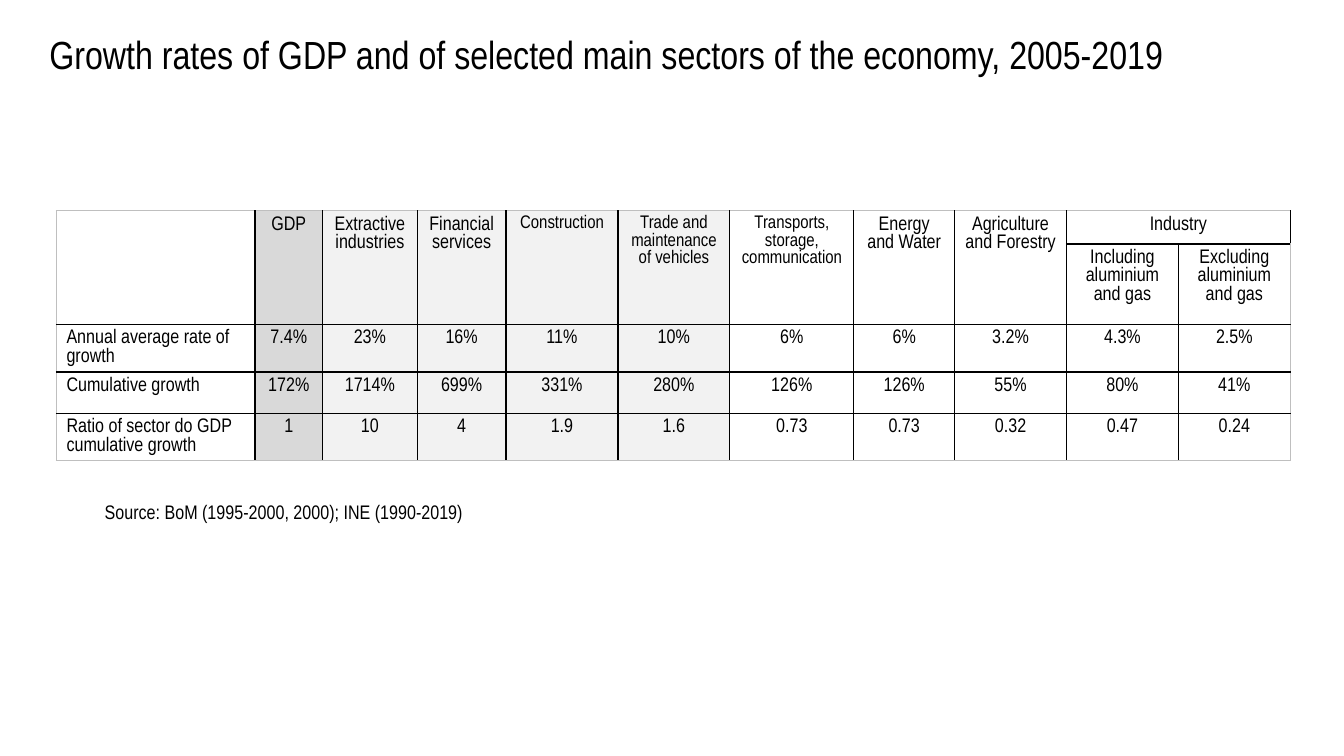
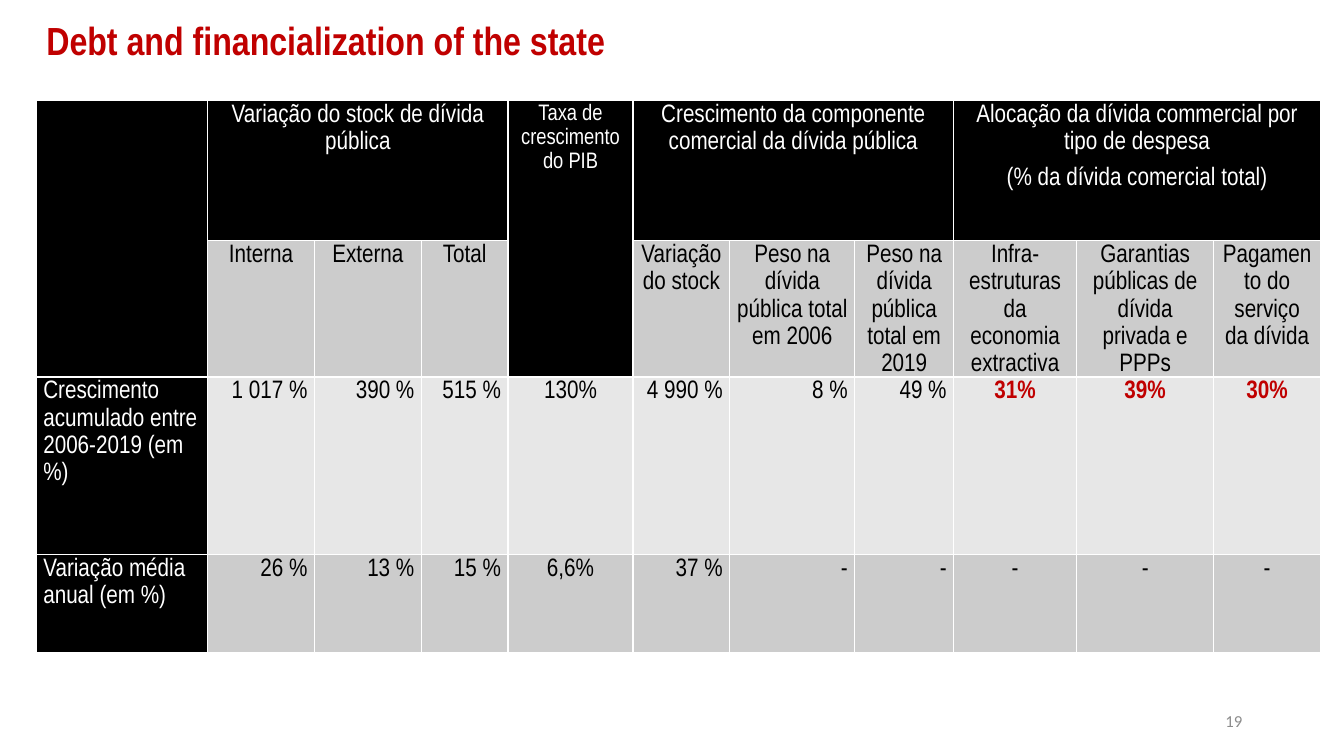
"""Build two slides with tables on growth by sector and on public debt."""
from lxml import etree
from pptx import Presentation
from pptx.dml.color import RGBColor
from pptx.enum.text import MSO_ANCHOR, MSO_AUTO_SIZE, PP_ALIGN
from pptx.oxml.ns import qn
from pptx.util import Inches, Pt

LEFT, CENTER, RIGHT = PP_ALIGN.LEFT, PP_ALIGN.CENTER, PP_ALIGN.RIGHT
MIDDLE, FIXED = MSO_ANCHOR.MIDDLE, MSO_AUTO_SIZE.NONE
BLACK = RGBColor(0x00, 0x00, 0x00)
WHITE = RGBColor(0xFF, 0xFF, 0xFF)
RED = RGBColor(0xC0, 0x00, 0x00)
EDGE_GREY = RGBColor(0xBF, 0xBF, 0xBF)
GDP_GREY = RGBColor(0xD9, 0xD9, 0xD9)
SECTOR_GREY = RGBColor(0xF2, 0xF2, 0xF2)
DARK_BAND = RGBColor(0xCC, 0xCC, 0xCC)
LIGHT_BAND = RGBColor(0xE7, 0xE7, 0xE7)
NUMBER_GREY = RGBColor(0x8C, 0x8C, 0x8C)
NARROW = "Arial Narrow"
TITLE_ONLY = 5

prs = Presentation()
prs.slide_width, prs.slide_height = Inches(13.33), Inches(7.5)
ACROSS, DOWN = prs.slide_width / 100, prs.slide_height / 100


def add_grid(slide, box, columns, rows, texts, spans):
    """Add a plain table; box is in percent of the slide, columns and rows are weights."""
    left, top, width, height = box
    grid = slide.shapes.add_table(
        len(rows), len(columns), int(left * ACROSS), int(top * DOWN),
        int(width * ACROSS), int(height * DOWN)).table
    grid.first_row = grid.horz_banding = False
    for column, weight in zip(grid.columns, columns):
        column.width = int(width * ACROSS * weight / sum(columns))
    for row, weight in zip(grid.rows, rows):
        row.height = int(height * DOWN * weight / sum(rows))
    for r, line in enumerate(texts):
        for c, text in enumerate(line):
            grid.cell(r, c).text = text
    for first_row, first_col, last_row, last_col in spans:
        grid.cell(first_row, first_col).merge(grid.cell(last_row, last_col))
    return grid


def format_cell(cell, fill, edges, font, paragraph):
    """Set fill, the left, right, top and bottom edge colours, and text formats."""
    if fill is None:
        cell.fill.background()
    else:
        cell.fill.solid()
        cell.fill.fore_color.rgb = fill
    properties = cell._tc.get_or_add_tcPr()
    for place, (side, color) in enumerate(zip("LRTB", edges)):
        edge = etree.Element(qn(f"a:ln{side}"), w=str(Pt(1)))
        solid = etree.SubElement(edge, qn("a:solidFill"))
        etree.SubElement(solid, qn("a:srgbClr"), val=str(color))
        properties.insert(place, edge)
    for line in cell.text_frame.paragraphs:
        for key, value in paragraph.items():
            setattr(line, key, value)
        for key, value in font.items():
            if key == "color":
                line.font.color.rgb = value
            else:
                setattr(line.font, key, value)
        for run in line.runs:
            run.font.name, run.font.size = line.font.name, line.font.size
            run.font.bold = line.font.bold
            run.font.color.rgb = font["color"]


HEADINGS = [
    ("Growth rates of GDP and of selected main sectors of the economy, 2005-2019",
     (2.93, 2.4, 95.05, 10.27), BLACK, False),
    ("Debt and financialization of the state", (2.7, 2.13, 95.65, 7.07), RED, True),
]
slides = []
for heading, (left, top, width, height), color, bold in HEADINGS:
    slide = prs.slides.add_slide(prs.slide_layouts[TITLE_ONLY])
    title = slide.shapes.title
    title.left, title.top = int(left * ACROSS), int(top * DOWN)
    title.width, title.height = int(width * ACROSS), int(height * DOWN)
    frame = title.text_frame
    frame.text = heading
    frame.vertical_anchor, frame.auto_size = MIDDLE, FIXED
    line = frame.paragraphs[0]
    line.alignment, line.line_spacing = LEFT, 0.9
    font = line.runs[0].font
    font.name, font.size, font.bold = NARROW, Pt(28), bold
    font.color.rgb = color
    slides.append(slide)
growth_slide, debt_slide = slides

GROWTH_COLUMNS = [1.97, 0.67, 0.94, 0.88, 1.11, 1.11, 1.23, 1, 1.11, 1.11, 1.11]
GROWTH_ROWS = [0.33, 0.8, 0.47, 0.41, 0.47]
GROWTH_TEXTS = [
    ["", "GDP", "Extractive industries", "Financial services", "Construction",
     "Trade and maintenance of vehicles", "Transports, storage, communication",
     "Energy and Water", "Agriculture and Forestry", "Industry", ""],
    [""] * 9 + ["Including aluminium and gas", "Excluding aluminium and gas"],
    ["Annual average rate of growth", "7.4%", "23%", "16%", "11%", "10%", "6%", "6%",
     "3.2%", "4.3%", "2.5%"],
    ["Cumulative growth", "172%", "1714%", "699%", "331%", "280%", "126%", "126%",
     "55%", "80%", "41%"],
    ["Ratio of sector do GDP cumulative growth", "1", "10", "4", "1.9", "1.6", "0.73",
     "0.73", "0.32", "0.47", "0.24"],
]
GROWTH_SPANS = [(0, c, 1, c) for c in range(9)] + [(0, 9, 0, 10)]
GROWTH_FILLS = [None, GDP_GREY] + [SECTOR_GREY] * 4 + [None] * 5
SMALL_HEADERS = (4, 5, 6)

growth = add_grid(growth_slide, (4.2, 27.87, 91.82, 33.07), GROWTH_COLUMNS, GROWTH_ROWS,
                  GROWTH_TEXTS, GROWTH_SPANS)
last_row, last_col = len(GROWTH_ROWS) - 1, len(GROWTH_COLUMNS) - 1
for r in range(last_row + 1):
    for c in range(last_col + 1):
        outer = (c == 0, c == last_col, r == 0, r == last_row)
        edges = [EDGE_GREY if at_rim else BLACK for at_rim in outer]
        size = Pt(13) if r == 0 and c in SMALL_HEADERS else Pt(14)
        format_cell(growth.cell(r, c), GROWTH_FILLS[c], edges,
                    {"name": NARROW, "size": size, "color": BLACK},
                    {"alignment": CENTER if c else LEFT})

DEBT_COLUMNS = [1.7, 1.06, 1.06, 0.86, 1.24, 0.96, 1.24, 0.98, 1.22, 1.36, 1.06]
DEBT_ROWS = [1.39, 1.34, 1.76, 0.97]
DEBT_TEXTS = [
    ["", "Variação do stock de dívida pública", "", "", "Taxa de crescimento do PIB",
     "Crescimento da componente comercial da dívida pública", "", "",
     "Alocação da dívida commercial por tipo de despesa\n(% da dívida comercial total)",
     "", ""],
    ["", "Interna", "Externa", "Total", "", "Variação do stock",
     "Peso na dívida pública total em 2006", "Peso na dívida pública total em 2019",
     "Infra-estruturas da economia extractiva",
     "Garantias públicas de dívida privada e PPPs", "Pagamento do serviço da dívida"],
    ["Crescimento acumulado entre 2006-2019 (em %)", "1 017 %", "390 %", "515 %", "130%",
     "4 990 %", "8 %", "49 %", "31%", "39%", "30%"],
    ["Variação média anual (em %)", "26 %", "13 %", "15 %", "6,6%", "37 %", "-", "-",
     "-", "-", "-"],
]
DEBT_SPANS = [(0, 0, 1, 0), (0, 4, 1, 4)] + [(0, c, 0, c + 2) for c in (1, 5, 8)]
BAND_FILLS = [BLACK, DARK_BAND, LIGHT_BAND, DARK_BAND]
GDP_COLUMN, ALLOCATION_START = 4, 8
DEBT_MARGINS = {"margin_left": Inches(0.07), "margin_right": Inches(0.07),
                "margin_top": 0, "margin_bottom": 0}

debt = add_grid(debt_slide, (2.7, 13.33, 95.57, 72.8), DEBT_COLUMNS, DEBT_ROWS,
                DEBT_TEXTS, DEBT_SPANS)
for r, band in enumerate(BAND_FILLS):
    for c in range(len(DEBT_COLUMNS)):
        cell = debt.cell(r, c)
        for key, value in DEBT_MARGINS.items():
            setattr(cell, key, value)
        header = r == 0 or c == 0 or (r == 1 and c == GDP_COLUMN)
        share = r == 2 and c >= ALLOCATION_START
        amount = r >= 2 and 0 < c < ALLOCATION_START and c != GDP_COLUMN
        alignment = RIGHT if amount else CENTER if c else LEFT
        color = WHITE if header else RED if share else BLACK
        size = Pt(16) if r == 0 and c == GDP_COLUMN else Pt(18)
        format_cell(cell, BLACK if header else band, [WHITE] * 4,
                    {"name": NARROW, "size": size, "color": color, "bold": share},
                    {"alignment": alignment, "line_spacing": 1.15,
                     "space_before": Pt(0 if amount else 3),
                     "space_after": Pt(18 if amount else 3)})

CAPTIONS = [
    (growth_slide, "Source: BoM (1995-2000, 2000); INE (1990-2019)",
     (7.05, 65.47, 31.51, 4.53), NARROW, 14, BLACK, LEFT),
    (debt_slide, "19", (70.67, 92.67, 22.51, 5.33), "Calibri", 12, NUMBER_GREY, RIGHT),
]
for slide, text, (left, top, width, height), face, size, color, alignment in CAPTIONS:
    frame = slide.shapes.add_textbox(int(left * ACROSS), int(top * DOWN),
                                     int(width * ACROSS), int(height * DOWN)).text_frame
    frame.word_wrap, frame.vertical_anchor = True, MIDDLE
    frame.text = text
    line = frame.paragraphs[0]
    line.alignment = alignment
    font = line.runs[0].font
    font.name, font.size, font.color.rgb = face, Pt(size), color

prs.save("out.pptx")
